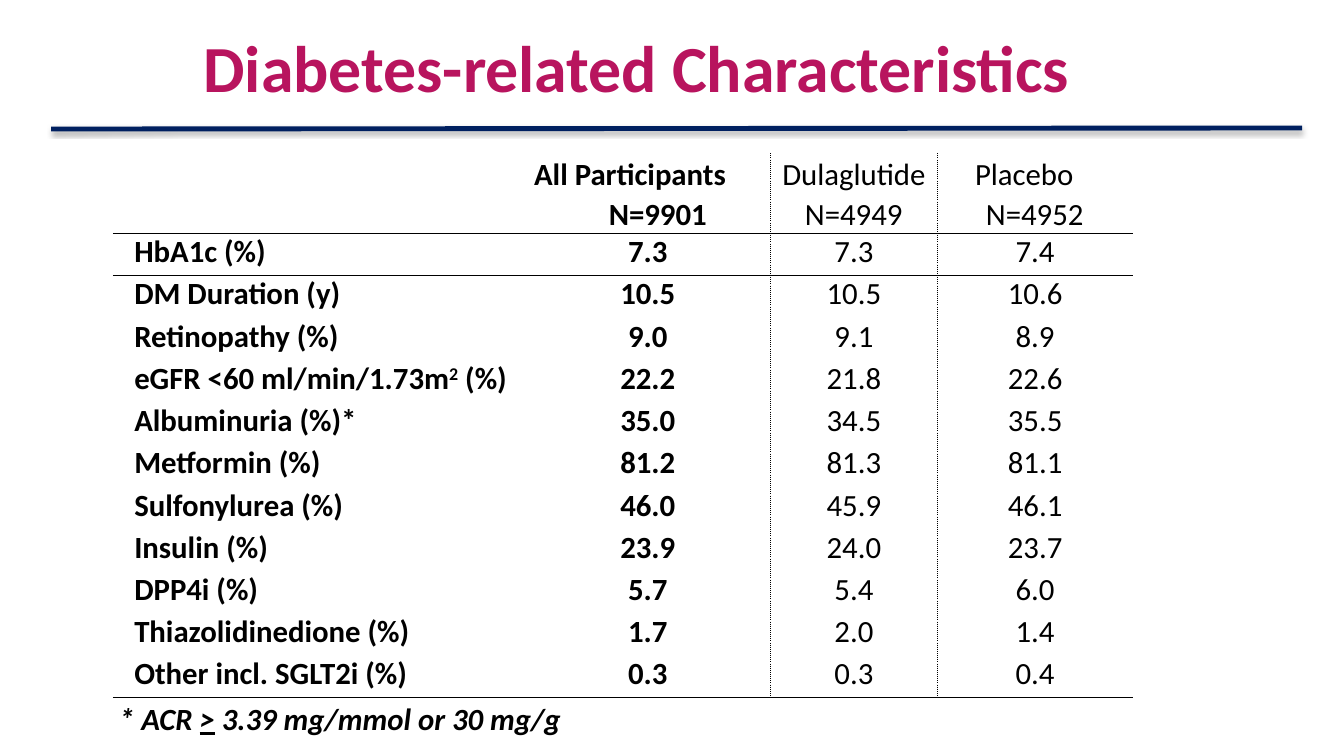
from lxml.etree import SubElement as Sub
from pptx import Presentation
from pptx.dml.color import RGBColor
from pptx.enum.shapes import MSO_CONNECTOR as Conn
from pptx.enum.text import MSO_ANCHOR as Anchor, PP_ALIGN as Align
from pptx.oxml.ns import qn
from pptx.util import Inches, Pt

COLS, ROWS = 160, 90
NO_STYLE = "{2D5ABB26-0587-4C30-8999-92F81FD0307C}"

HEADERS = [
    [("All Participants", 0.2), ("N=9901", 9.1)],
    [("Dulaglutide", 0.6), ("N=4949", 3.3)],
    [("Placebo", 3.6), ("N=4952", 4.9)],
]
BODY = [
    ("HbA1c (%)", "7.3", "7.3", "7.4"),
    ("DM Duration (y)", "10.5", "10.5", "10.6"),
    ("Retinopathy (%)", "9.0", "9.1", "8.9"),
    ("eGFR <60 ml/min/1.73m^2^ (%)", "22.2", "21.8", "22.6"),
    ("Albuminuria (%)*", "35.0", "34.5", "35.5"),
    ("Metformin (%)", "81.2", "81.3", "81.1"),
    ("Sulfonylurea (%)", "46.0", "45.9", "46.1"),
    ("Insulin (%)", "23.9", "24.0", "23.7"),
    ("DPP4i (%)", "5.7", "5.4", "6.0"),
    ("Thiazolidinedione (%)", "1.7", "2.0", "1.4"),
    ("Other incl. SGLT2i (%)", "0.3", "0.3", "0.4"),
]


def rgb(value):
    return RGBColor.from_string(value)


class Deck:
    font, ink, accent, rule = "Calibri", "000000", "B8145E", "002060"
    body_size, title_size = 22, 47

    def __init__(self):
        self.prs = Presentation()
        self.prs.slide_width, self.prs.slide_height = Inches(13.33), Inches(7.5)
        self.s = self.prs.slides.add_slide(self.prs.slide_layouts[6])

    def x(self, cols):
        return round(self.prs.slide_width * cols / COLS)

    def y(self, rows):
        return round(self.prs.slide_height * rows / ROWS)

    def box(self, left, top, width, height):
        return self.x(left), self.y(top), self.x(width), self.y(height)

    def style(self, p, size=body_size, color=ink, bold=True, italic=None):
        f = p.font
        f.name, f.size, f.bold, f.italic = self.font, Pt(size), bold, italic
        f.color.rgb = rgb(color)

    def text(self, place, runs, anchor=Anchor.TOP, spacing=None, **look):
        tf = self.s.shapes.add_textbox(*self.box(*place)).text_frame
        tf.word_wrap, tf.vertical_anchor = True, anchor
        p = tf.paragraphs[0]
        p.line_spacing = spacing
        for words, underline in runs:
            r = p.add_run()
            r.text = words
            if underline:
                r.font.underline = True
        self.style(p, **look)

    def line(self, start, end, width):
        cx = self.s.shapes.add_connector(
            Conn.STRAIGHT, self.x(start[0]), self.y(start[1]),
            self.x(end[0]), self.y(end[1]))
        cx.line.color.rgb, cx.line.width = rgb(self.rule), Pt(width)
        effects = Sub(cx._element.spPr, qn("a:effectLst"))
        shadow = Sub(effects, qn("a:outerShdw"), blurRad=str(Pt(3.1)),
                     dist=str(Pt(1.8)), dir="5400000", rotWithShape="0")
        black = Sub(shadow, qn("a:srgbClr"), val=self.ink)
        Sub(black, qn("a:alpha"), val="35000")

    def borders(self, cell, sides):
        tc_pr = cell._tc.get_or_add_tcPr()
        for side in "LRTB":
            if side in sides:
                ln = Sub(tc_pr, qn(f"a:ln{side}"), w=str(Pt(1)))
                Sub(Sub(ln, qn("a:solidFill")), qn("a:srgbClr"), val=self.ink)
                dash = "sysDot" if side in "LR" else "solid"
                Sub(ln, qn("a:prstDash"), val=dash)

    def header(self, cell, lines, bold):
        tf = cell.text_frame
        for i, (words, indent) in enumerate(lines):
            p = tf.add_paragraph() if i else tf.paragraphs[0]
            p.text, p.line_spacing = words, 1.07
            p._p.get_or_add_pPr().set("marL", str(self.x(indent)))
            self.style(p, bold=bold)

    def value(self, cell, words, align, bold):
        p = cell.text_frame.paragraphs[0]
        p.alignment, p.space_after = align, Pt(8)
        for i, part in enumerate(words.split("^")):
            r = p.add_run()
            r.text = part
            if i % 2:
                r.font._element.set("baseline", "30000")
        self.style(p, bold=bold)

    def table(self, place, widths, head_height, row_height):
        last = len(BODY)
        table = self.s.shapes.add_table(
            last + 1, len(widths), *self.box(*place)).table
        table.first_row = table.horz_banding = False
        table._tbl.tblPr.find(qn("a:tableStyleId")).text = NO_STYLE
        for column, width in zip(table.columns, widths):
            column.width = self.x(width)
        for i, row in enumerate(table.rows):
            row.height = self.y(row_height if i else head_height)
            for j, cell in enumerate(row.cells):
                sides = ("L" if j in (2, 3) else "") + ("R" if j in (1, 2) else "")
                sides += ("T" if i == 1 else "") + ("B" if i in (0, last) else "")
                self.borders(cell, sides)
                cell.fill.background()
                cell.margin_left = cell.margin_right = self.x(0.85)
                cell.margin_top = cell.margin_bottom = 0
                if i:
                    if j == 0:
                        cell.margin_left = self.x(2.55)
                    align = Align.CENTER if j else Align.LEFT
                    self.value(cell, BODY[i - 1][j], align, j < 2)
                elif j:
                    self.header(cell, HEADERS[j - 1], j < 2)


def main():
    deck = Deck()
    deck.line((6.1, 15.36), (155, 15.24), 3.5)
    deck.table((13.44, 18.24, 121.4, 64.8), (49.1, 29.15, 19.95, 23.2), 9.12, 5.03)
    deck.text((13, 82.7, 79.5, 5.6),
              [("* ACR ", False), (">", True), (" 3.39 mg/mmol or 30 mg/g", False)],
              italic=True)
    deck.text((23.05, 1, 134.8, 15), [("Diabetes-related Characteristics", False)],
              anchor=Anchor.MIDDLE, spacing=0.9,
              size=deck.title_size, color=deck.accent)
    deck.prs.save("out.pptx")


if __name__ == "__main__":
    main()
